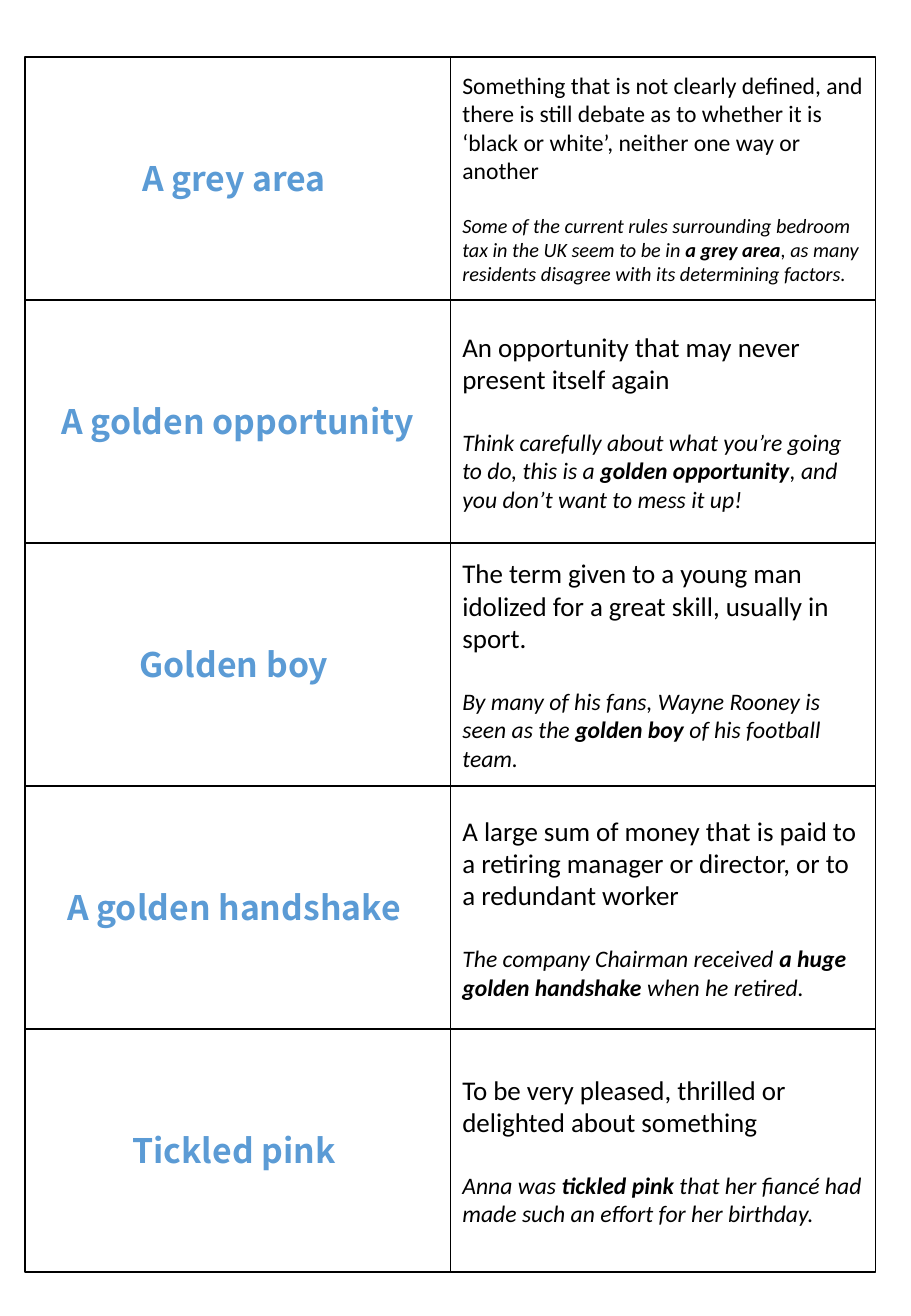
from pptx import Presentation
from pptx.dml.color import RGBColor
from pptx.enum.shapes import MSO_SHAPE
from pptx.enum.text import MSO_ANCHOR, PP_ALIGN
from pptx.util import Cm, Pt
from dataclasses import dataclass

IDIOMS = [
    ("A grey area ",
     "Something that is not clearly defined, and there is still debate as to whether it is "
     "‘black or white’, neither one way or another",
     ("Some of the current rules surrounding bedroom tax in the UK seem to be in ",
      "a grey area", ", as many residents disagree with its determining factors."),
     "compact"),
    ("A golden opportunity",
     "An opportunity that may never present itself again",
     ("Think carefully about what you’re going to do, this is a ",
      "golden opportunity", ", and you don’t want to mess it up!"),
     "regular"),
    ("Golden boy ",
     "The term given to a young man idolized for a great skill, usually in sport.",
     ("By many of his fans, Wayne Rooney is seen as the ",
      "golden boy", " of his football team."),
     "regular"),
    ("A golden handshake ",
     "A large sum of money that is paid to a retiring manager or director, "
     "or to a redundant worker",
     ("The company Chairman received ",
      "a huge golden handshake", " when he retired."),
     "regular"),
    ("Tickled pink ",
     "To be very pleased, thrilled or delighted about something",
     ("Anna was ",
      "tickled pink", " that her fiancé had made such an effort for her birthday."),
     "regular"),
]


@dataclass(frozen=True)
class Theme:
    paper: RGBColor = RGBColor(0xFF, 0xFF, 0xFF)
    ink: RGBColor = RGBColor(0, 0, 0)
    accent: RGBColor = RGBColor(0x5B, 0x9B, 0xD5)
    idiom_font: str = "Noto Sans CJK KR"
    body_font: str = "Calibri"
    idiom_size: int = 20
    compact: tuple = (14, 12)
    regular: tuple = (16, 14)
    line_height: float = 1.22


THEME = Theme()
SLIDE_WIDTH, SLIDE_HEIGHT = Cm(19.05), Cm(27.51)
LEFT, TOP = Cm(0.53), Cm(1.19)
CARD_WIDTH, CARD_HEIGHT = Cm(8.89), Cm(5.08)


def add_card(slide, row, column):
    card = slide.shapes.add_shape(
        MSO_SHAPE.RECTANGLE, LEFT + column * CARD_WIDTH, TOP + row * CARD_HEIGHT,
        CARD_WIDTH, CARD_HEIGHT)
    card.shadow.inherit = False
    card.fill.solid()
    card.fill.fore_color.rgb = THEME.paper
    card.line.color.rgb = THEME.ink
    card.line.width = Pt(1)
    card.text_frame.word_wrap = True
    card.text_frame.vertical_anchor = MSO_ANCHOR.MIDDLE
    return card.text_frame


def add_words(paragraph, words, color, **font_format):
    run = paragraph.add_run()
    run.text = words
    run.font.color.rgb = color
    for attribute, value in font_format.items():
        setattr(run.font, attribute, value)


def add_idiom(slide, row, idiom, definition, example, density):
    heading = add_card(slide, row, 0).paragraphs[0]
    heading.alignment = PP_ALIGN.CENTER
    add_words(heading, idiom, THEME.accent, name=THEME.idiom_font,
              size=Pt(THEME.idiom_size), bold=True)

    definition_size, example_size = getattr(THEME, density)
    explanation = add_card(slide, row, 1)
    meaning, usage = explanation.paragraphs[0], explanation.add_paragraph()
    meaning.alignment = usage.alignment = PP_ALIGN.LEFT
    usage.space_before = Pt(round(definition_size * THEME.line_height, 1))
    add_words(meaning, definition, THEME.ink, name=THEME.body_font, size=Pt(definition_size))
    for position, words in enumerate(example):
        add_words(usage, words, THEME.ink, name=THEME.body_font, size=Pt(example_size),
                  italic=True, bold=position == 1)


def main():
    deck = Presentation()
    deck.slide_width, deck.slide_height = SLIDE_WIDTH, SLIDE_HEIGHT
    slide = deck.slides.add_slide(deck.slide_layouts[6])
    for row, entry in enumerate(IDIOMS):
        add_idiom(slide, row, *entry)
    deck.save("out.pptx")


if __name__ == "__main__":
    main()
